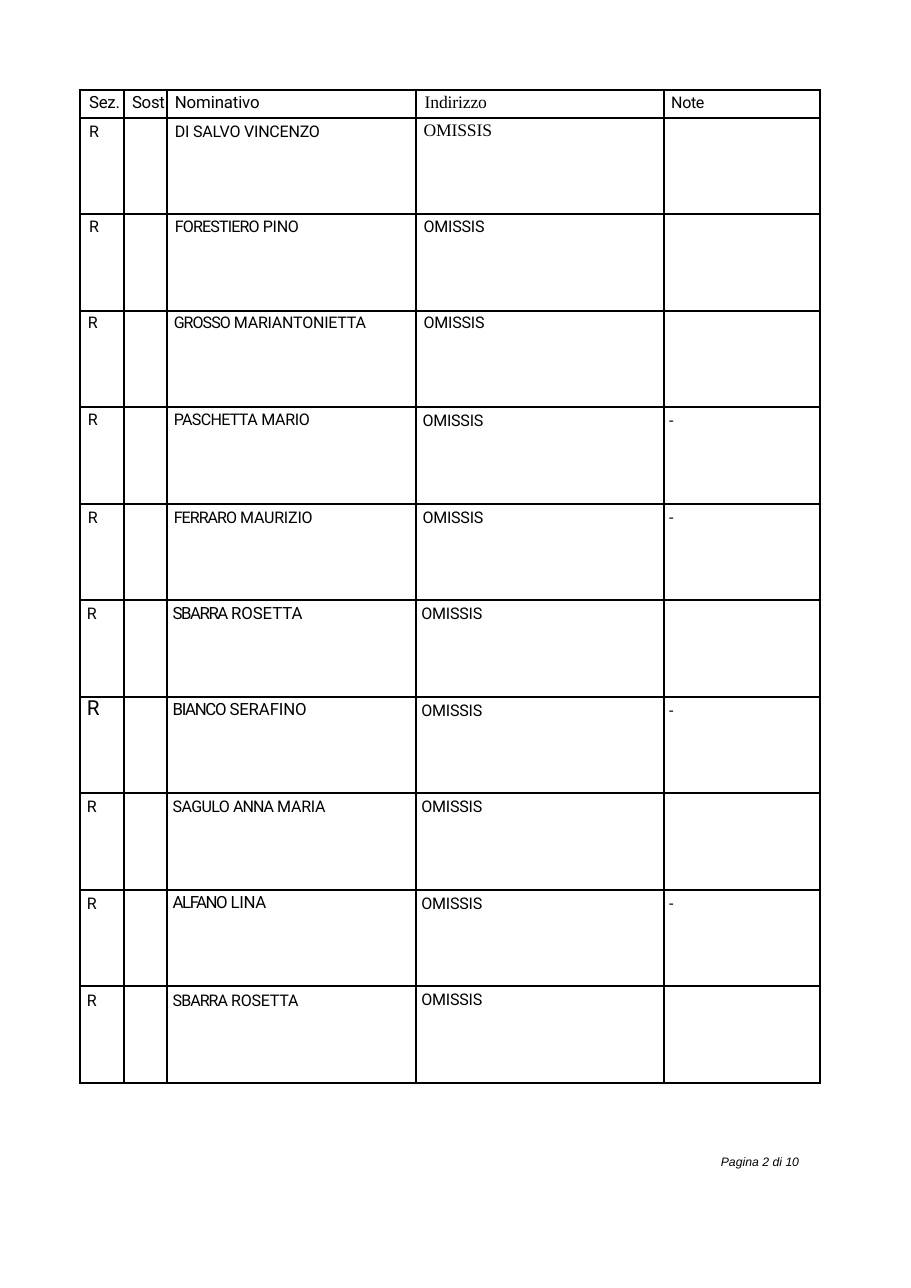
from dataclasses import dataclass

from lxml import etree
from pptx import Presentation
from pptx.dml.color import RGBColor
from pptx.enum.text import MSO_AUTO_SIZE
from pptx.oxml.ns import qn
from pptx.util import Inches, Pt

FIT_SHAPE = MSO_AUTO_SIZE.SHAPE_TO_FIT_TEXT


@dataclass(frozen=True)
class Theme:
    ink: RGBColor = RGBColor(0, 0, 0)
    sans: str = "Roboto"
    serif: str = "Times New Roman"
    footer_font: str = "Arial"
    body: float = 10.5
    heading: float = 11
    serif_size: float = 11.5
    large: float = 13.5
    footer: float = 8
    border: float = 1.5


T = Theme()


def write(box, runs, left=0, top=0, size=T.body, font=T.sans, italic=False):
    """Fill a cell or text box with (text, letter spacing in points) runs."""
    tf = box.text_frame
    frame = box if box in cells else tf
    frame.margin_left, frame.margin_top = Inches(left), Inches(top)
    frame.margin_right = frame.margin_bottom = 0
    p = tf.paragraphs[0]
    for text, spacing in runs:
        r = p.add_run()
        r.text = text
        r.font.size, r.font.name, r.font.italic = Pt(size), font, italic
        r.font.color.rgb = T.ink
        r.font._element.set("spc", str(round(spacing * 100)))


def add_borders(cell):
    tc_pr = cell._tc.get_or_add_tcPr()
    for i, side in enumerate(("a:lnL", "a:lnR", "a:lnT", "a:lnB")):
        ln = etree.Element(qn(side), w=str(Pt(T.border)))
        fill = etree.SubElement(ln, qn("a:solidFill"))
        etree.SubElement(fill, qn("a:srgbClr"), val=str(T.ink))
        tc_pr.insert(i, ln)


# Heading: text, letter spacing, left, top, size, font
HEADINGS = [
    ("Sez.", -0.2, 0.08, 0.02, T.heading, T.sans),
    ("Sost", -0.2, 0.07, 0.02, T.heading, T.sans),
    ("Nominativo", -0.1, 0.07, 0.02, T.heading, T.sans),
    ("Indirizzo", -0.1, 0.08, 0.02, T.serif_size, T.serif),
    ("Note", -0.2, 0.07, 0.03, T.body, T.sans),
]

# Person: name runs, name size, note, lefts and tops of section, name, address
PEOPLE = [
    ([("DI SALVO VINCENZO", -0.1)], T.body, "", (0.08, 0.07, 0.07), (0.04, 0.04, 0.03)),
    ([("FORESTIERO ", -0.5), ("PINO", -0.2)], T.body, "", (0.08, 0.07, 0.07), (0.03, 0.03, 0.03)),
    ([("GROSSO ", -0.6), ("MARIANTONIETTA", -0.1)], T.body, "", (0.07, 0.06, 0.07), (0.03, 0.03, 0.03)),
    ([("PASCHETTA", -0.4), (" MARIO", -0.2)], T.body, "-", (0.07, 0.06, 0.06), (0.03, 0.03, 0.04)),
    ([("FERRARO ", -0.6), ("MAURIZIO", -0.1)], T.body, "-", (0.07, 0.06, 0.06), (0.04, 0.04, 0.04)),
    ([("SBARRA ", -1), ("ROSETTA", -0.1)], T.heading, "", (0.06, 0.05, 0.05), (0.04, 0.03, 0.04)),
    ([("BIANCO ", -0.9), ("SERAFINO", -0.1)], T.heading, "-", (0.06, 0.05, 0.05), (0, 0.03, 0.04)),
    ([("SAGULO ", -0.4), ("ANNA ", -0.6), ("MARIA", -0.1)], T.body, "", (0.06, 0.05, 0.05), (0.04, 0.04, 0.04)),
    ([("ALFANO ", -1), ("LINA", -0.2)], T.heading, "-", (0.06, 0.05, 0.05), (0.04, 0.03, 0.04)),
    ([("SBARRA ", -0.6), ("ROSETTA", -0.1)], T.body, "", (0.06, 0.05, 0.05), (0.05, 0.05, 0.04)),
]
COL_WIDTHS = [0.4, 0.39, 2.26, 2.25, 1.42]
TABLE_HEIGHT, HEAD_HEIGHT = 9.02, 0.25

prs = Presentation()
prs.slide_width = Pt(596)
prs.slide_height = Pt(842.5)
s = prs.slides.add_slide(prs.slide_layouts[6])

# Table grid
table = s.shapes.add_table(len(PEOPLE) + 1, len(COL_WIDTHS), Inches(0.73), Inches(0.82),
                           Inches(sum(COL_WIDTHS)), Inches(TABLE_HEIGHT)).table
table.first_row = table.horz_banding = False
for col, width in zip(table.columns, COL_WIDTHS):
    col.width = Inches(width)
for i, row in enumerate(table.rows):
    row.height = Inches((TABLE_HEIGHT - HEAD_HEIGHT) / len(PEOPLE) if i else HEAD_HEIGHT)
cells = list(table.iter_cells())
for cell in cells:
    cell.margin_left = cell.margin_right = cell.margin_top = cell.margin_bottom = 0
    cell.fill.background()
    add_borders(cell)

# Heading row
for c, (text, spacing, left, top, size, font) in enumerate(HEADINGS):
    write(table.cell(0, c), [(text, spacing)], left, top, size, font)

# People
for i, (name, name_size, note, lefts, tops) in enumerate(PEOPLE, 1):
    section_size = T.large if tops[0] == 0 else T.body
    address_size, address_font = (T.serif_size, T.serif) if i == 1 else (T.body, T.sans)
    write(table.cell(i, 0), [("R", -0.5)], lefts[0], tops[0], section_size)
    write(table.cell(i, 2), name, lefts[1], tops[1], name_size)
    write(table.cell(i, 3), [("OMISSIS", -0.1)], lefts[2], tops[2], address_size, address_font)
    if note:
        write(table.cell(i, 4), [(note, -0.5)], 0.05, 0.04)

# Page number
sp = s.shapes.add_textbox(Inches(6.54), Inches(10.48), Inches(0.76), Inches(0.16))
sp.text_frame.word_wrap = True
sp.text_frame.auto_size = FIT_SHAPE
write(sp, [("Pagina 2 di ", 0), ("10", -0.2)], 0.01, 0.01, T.footer, T.footer_font, italic=True)

prs.save("out.pptx")
